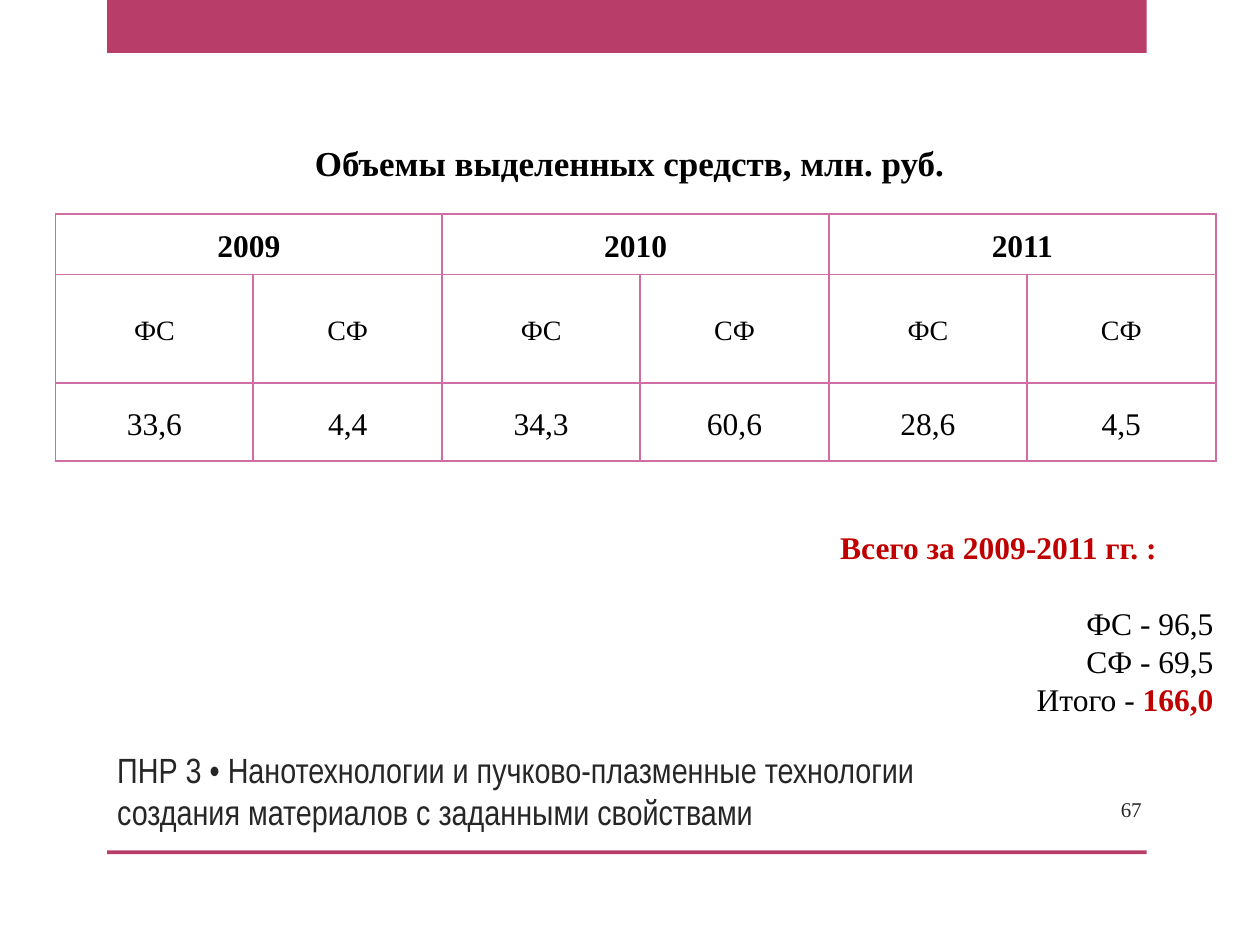
"""Build the funding volumes slide with a yearly table and totals."""
import pptx
import pptx.dml.color
import pptx.enum.text
import pptx.oxml.ns
import pptx.util
from lxml import etree

Inches, Pt = pptx.util.Inches, pptx.util.Pt
ALIGN, ANCHOR = pptx.enum.text.PP_ALIGN, pptx.enum.text.MSO_ANCHOR

COLORS = {"accent": "B83D68", "border": "CF6DA4", "gray": "262626",
          "black": "000000", "red": "C00000"}
SERIF = "Times New Roman"
WIDTH, HEIGHT = 10, 7.5

HEADING = "Объемы выделенных средств, млн. руб."
TOPIC = ("ПНР 3 • Нанотехнологии и пучково-плазменные технологии "
         "создания материалов с заданными свойствами")
PAGE = "67"
FUNDING = [("2009", "33,6", "4,4"), ("2010", "34,3", "60,6"), ("2011", "28,6", "4,5")]
SOURCES = ("ФС", "СФ")
SOURCE_WIDTHS = (1.57, 1.5)
ROW_HEIGHTS = (0.48, 0.86, 0.62)
TOTALS = [
    [("Всего за 2009-2011 гг. :", "red", True)],
    [("ФС - 96,5", "black", False)],
    [("СФ - 69,5", "black", False)],
    [("Итого - ", "black", False), ("166,0", "red", True)],
]


def rgb(name):
    return pptx.dml.color.RGBColor.from_string(COLORS[name])


def style(run, size, color, bold=False, font=SERIF):
    run.font.size, run.font.bold, run.font.name = Pt(size), bold, font
    run.font.color.rgb = rgb(color)


def add_band(slide, top, height):
    band = slide.shapes.add_shape(pptx.enum.shapes.MSO_SHAPE.RECTANGLE, Inches(0.85),
                                  Inches(top), Inches(8.25), Inches(height))
    band.shadow.inherit = False
    band.fill.solid()
    band.fill.fore_color.rgb = rgb("accent")
    band.line.fill.background()


def add_text(slide, box, lines, size, align=ALIGN.LEFT, anchor=ANCHOR.TOP):
    frame = slide.shapes.add_textbox(*map(Inches, box)).text_frame
    frame.word_wrap, frame.vertical_anchor = True, anchor
    for index, line in enumerate(lines):
        paragraph = frame.add_paragraph() if index else frame.paragraphs[0]
        paragraph.alignment = align
        for text, color, bold in line:
            run = paragraph.add_run()
            run.text = text
            style(run, size, color, bold)
    return frame


def add_borders(cell):
    properties = cell._tc.get_or_add_tcPr()
    qn = pptx.oxml.ns.qn
    for side in "LRTB":
        edge = etree.SubElement(properties, qn(f"a:ln{side}"), w=str(Pt(1)))
        fill = etree.SubElement(edge, qn("a:solidFill"))
        etree.SubElement(fill, qn("a:srgbClr"), val=COLORS["border"])


def fill_cell(cell, text, size, bold, space_after):
    cell.vertical_anchor = ANCHOR.MIDDLE
    cell.margin_left = cell.margin_right = Inches(0.07)
    cell.margin_top = cell.margin_bottom = 0
    add_borders(cell)
    cell.fill.background()
    if text:
        paragraph = cell.text_frame.paragraphs[0]
        paragraph.text = text
        paragraph.alignment, paragraph.line_spacing = ALIGN.CENTER, 1.15
        paragraph.space_after = Pt(space_after)
        style(paragraph.runs[0], size, "black", bold)


def add_funding(slide):
    span = len(SOURCES)
    rows = [
        ([text for year, *_ in FUNDING for text in (year, "")], 18, True, 0),
        (SOURCES * len(FUNDING), 16, False, 0),
        ([amount for _, *amounts in FUNDING for amount in amounts], 18, False, 10),
    ]
    widths = SOURCE_WIDTHS * len(FUNDING)
    table = slide.shapes.add_table(len(rows), len(widths), Inches(0.44), Inches(1.7),
                                   Inches(sum(widths)), Inches(sum(ROW_HEIGHTS))).table
    table.first_row = table.horz_banding = False
    for column, width in zip(table.columns, widths):
        column.width = Inches(width)
    for r, (texts, size, bold, space_after) in enumerate(rows):
        table.rows[r].height = Inches(ROW_HEIGHTS[r])
        for c, text in enumerate(texts):
            fill_cell(table.cell(r, c), text, size, bold, space_after)
    for c in range(0, len(widths), span):
        table.cell(0, c).merge(table.cell(0, c + span - 1))


def add_topic(slide):
    title = slide.shapes.title
    title.left, title.top, title.width, title.height = map(Inches, (0.83, 5.95, 7.42, 0.71))
    frame = title.text_frame
    frame.text = TOPIC
    frame.word_wrap, frame.vertical_anchor = True, ANCHOR.BOTTOM
    frame.auto_size = pptx.enum.text.MSO_AUTO_SIZE.NONE
    frame.paragraphs[0].alignment = ALIGN.LEFT
    style(frame.paragraphs[0].runs[0], 20, "gray", font="Arial Narrow")


def main():
    deck = pptx.Presentation()
    deck.slide_width, deck.slide_height = Inches(WIDTH), Inches(HEIGHT)
    slide = deck.slides.add_slide(deck.slide_layouts[5])
    add_band(slide, 0, 0.42)
    add_band(slide, 0.9 * HEIGHT, 0.03)
    add_topic(slide)
    add_text(slide, (8.33, 6.22, 0.83, 0.4), [[(PAGE, "gray", False)]], 12,
             ALIGN.RIGHT, ANCHOR.MIDDLE)
    add_funding(slide)
    totals = add_text(slide, (6.5, 4.14, 3.23, 1.6), TOTALS, 18, ALIGN.RIGHT)
    caption = totals.paragraphs[0]
    caption.alignment, caption.space_after = ALIGN.LEFT, Pt(22)
    caption._p.get_or_add_pPr().set("marL", str(Inches(0.07)))
    add_text(slide, (2.4, 1.07, 5.59, 0.44), [[(HEADING, "black", True)]], 20)
    deck.save("out.pptx")


if __name__ == "__main__":
    main()
